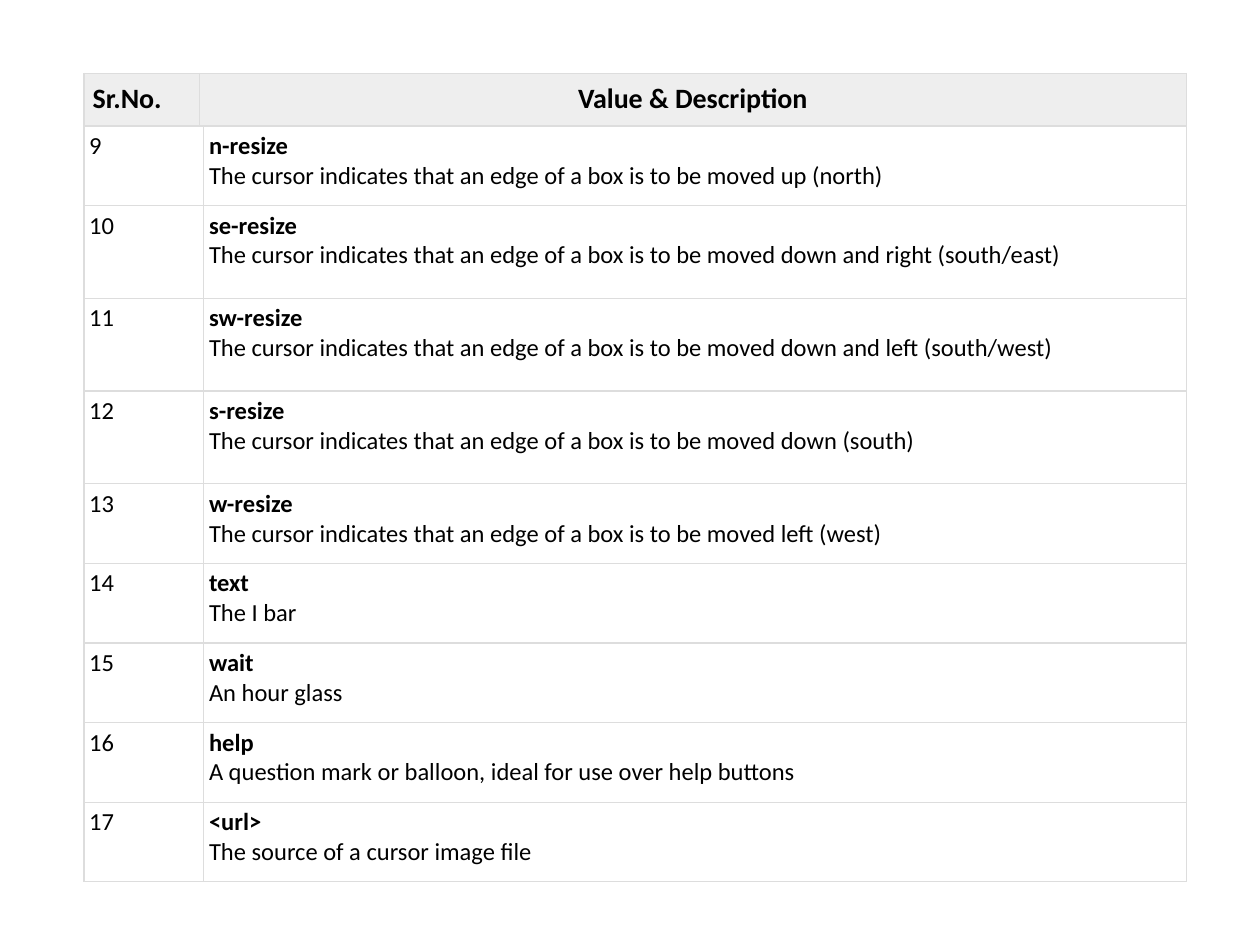
from lxml import etree
from pptx import Presentation
from pptx.dml.color import RGBColor
from pptx.enum.text import PP_ALIGN
from pptx.oxml.ns import qn
from pptx.util import Pt

COLORS = {"text": "000000", "head": "EEEEEE", "line": "DDDDDD"}
FONT = "Calibri"

MOVED = "The cursor indicates that an edge of a box is to be moved "
# Value, description, row height
VALUES = [
    ("n-resize", MOVED + "up (north)", 45.5),
    ("se-resize", MOVED + "down and right (south/east)", 53),
    ("sw-resize", MOVED + "down and left (south/west)", 53),
    ("s-resize", MOVED + "down (south)", 53),
    ("w-resize", MOVED + "left (west)", 45.5),
    ("text", "The I bar", 45.5),
    ("wait", "An hour glass", 45.5),
    ("help", "A question mark or balloon, ideal for use over help buttons", 45.5),
    ("<url>", "The source of a cursor image file", 45.5),
]
FIRST = 9


def add_borders(cell):
    props = cell._tc.get_or_add_tcPr()
    for place, side in enumerate(("lnL", "lnR", "lnT", "lnB")):
        line = etree.Element(qn("a:" + side), w=str(Pt(0.75)))
        fill = etree.SubElement(line, qn("a:solidFill"))
        etree.SubElement(fill, qn("a:srgbClr"), val=COLORS["line"])
        props.insert(place, line)


def fill_cell(cell, lines, size, inset, align, bold, fill=None):
    """Write lines into a cell; bold holds one flag for each line."""
    cell.margin_left = cell.margin_right = Pt(inset)
    cell.margin_top = cell.margin_bottom = Pt(inset)
    if fill:
        cell.fill.solid()
        cell.fill.fore_color.rgb = RGBColor.from_string(fill)
    else:
        cell.fill.background()
    add_borders(cell)
    cell.text_frame.text = "\n".join(lines)
    for para, strong in zip(cell.text_frame.paragraphs, bold):
        para.alignment = align
        for run in para.runs:
            run.font.name = FONT
            run.font.size = Pt(size)
            run.font.bold = strong
            run.font.color.rgb = RGBColor.from_string(COLORS["text"])


def make_grid(slide, box, widths, heights):
    frame = slide.shapes.add_table(
        len(heights), len(widths), *(Pt(length) for length in box))
    table = frame.table
    table.first_row = table.horz_banding = False
    for column, width in zip(table.columns, widths):
        column.width = Pt(width)
    for row, height in zip(table.rows, heights):
        row.height = Pt(height)
    return table


def add_values(slide, box):
    number = 68.5
    table = make_grid(slide, box, (number, box[2] - number),
                      [height for _, _, height in VALUES])
    for row, (value, about, _) in enumerate(VALUES):
        fill_cell(table.cell(row, 0), [str(FIRST + row)], 14, 3,
                  PP_ALIGN.LEFT, [False])
        fill_cell(table.cell(row, 1), [value, about], 14, 3,
                  PP_ALIGN.JUSTIFY, [True, False])


def add_header(slide, box):
    number = 66
    table = make_grid(slide, box, (number, box[2] - number), [box[3]])
    titles = (("Sr.No.", PP_ALIGN.LEFT),
              ("Value & Description", PP_ALIGN.CENTER))
    for col, (title, align) in enumerate(titles):
        fill_cell(table.cell(0, col), [title], 16, 5, align, [True],
                  COLORS["head"])


def main():
    deck = Presentation()
    deck.slide_width, deck.slide_height = Pt(720), Pt(540)
    slide = deck.slides.add_slide(deck.slide_layouts[6])
    left, width, split, head = 48, 630, 72, 30
    # Body below the split, header row above it
    add_values(slide, (left, split, width, sum(v[2] for v in VALUES)))
    add_header(slide, (left, split - head, width, head))
    deck.save("out.pptx")


if __name__ == "__main__":
    main()
